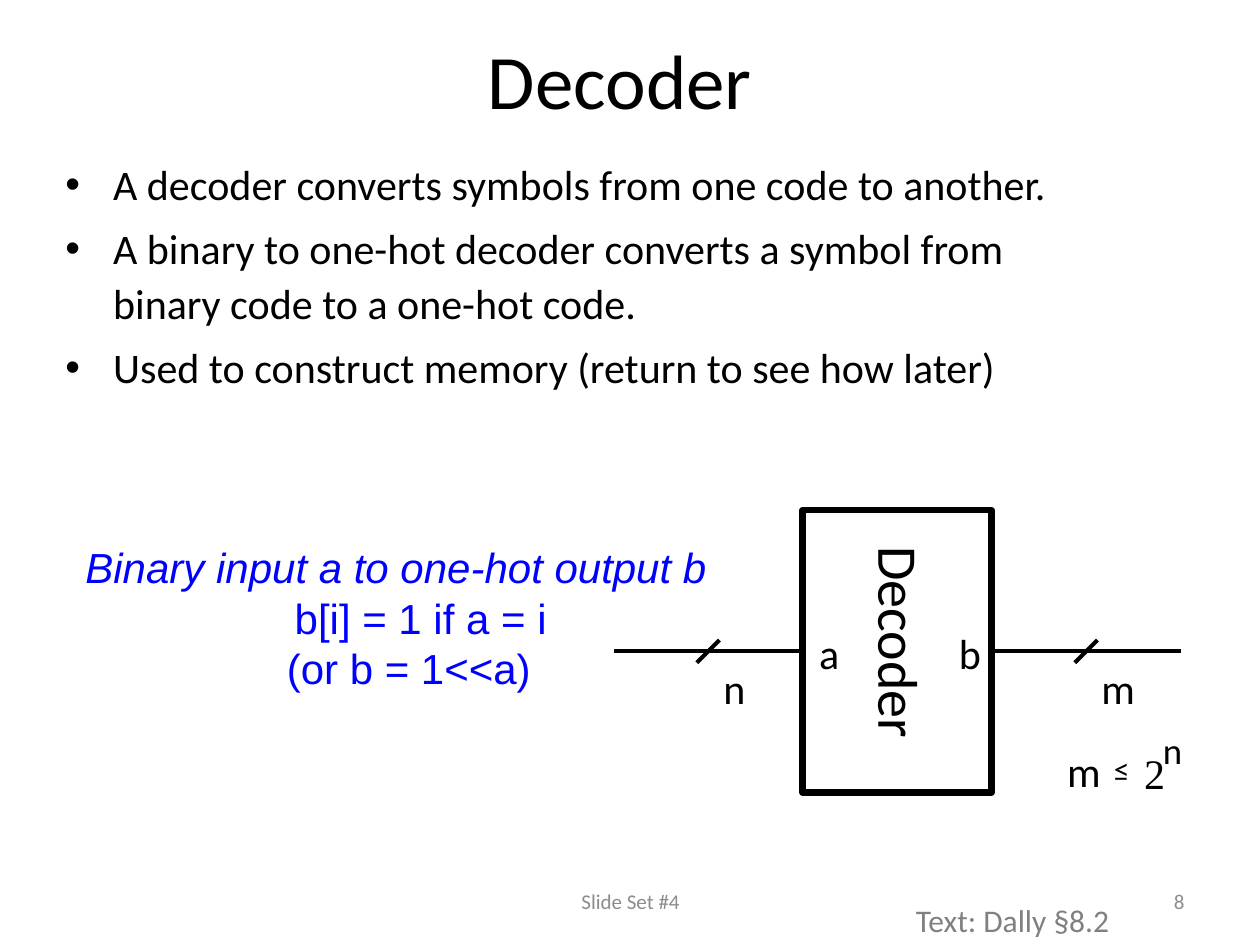
from dataclasses import dataclass

from lxml.etree import SubElement
from pptx import Presentation
from pptx.dml.color import RGBColor
from pptx.enum.shapes import MSO_CONNECTOR as Link, MSO_SHAPE as Preset
from pptx.enum.text import MSO_ANCHOR as Anchor, PP_ALIGN as Align
from pptx.oxml.ns import qn
from pptx.util import Inches, Pt


@dataclass(frozen=True)
class Theme:
    """Colours, fonts and type sizes of the slide."""
    ink: RGBColor = RGBColor(0, 0, 0)
    paper: RGBColor = RGBColor(255, 255, 255)
    accent: RGBColor = RGBColor(0, 0, 255)
    source: RGBColor = RGBColor(0x80, 0x80, 0x80)
    footer: RGBColor = RGBColor(0x8C, 0x8C, 0x8C)
    main: str = "Calibri"
    formula: str = "Arial"
    digit: str = "Times New Roman"
    title: int = 44
    block: int = 32
    body: int = 24
    exponent: int = 21
    small: int = 18
    tiny: int = 12


THEME = Theme()


def add_text(slide, box, lines, size=THEME.body, color=THEME.ink, font=THEME.main,
             align=Align.LEFT, anchor=Anchor.TOP, tight=False):
    """Place lines of text in a box and return its shape."""
    shape = slide.shapes.add_textbox(*map(Inches, box))
    frame = shape.text_frame
    frame.text = "\n".join(lines)
    frame.word_wrap = not tight
    frame.vertical_anchor = anchor
    if tight:
        for side in ("left", "top", "right", "bottom"):
            setattr(frame, f"margin_{side}", 0)
    for paragraph in frame.paragraphs:
        paragraph.alignment = align
        for run in paragraph.runs:
            run.font.color.rgb = color
            for key, value in {"size": Pt(size), "name": font}.items():
                setattr(run.font, key, value)
    return shape


def add_wire(slide, start, end):
    """Draw a straight black line between two points."""
    wire = slide.shapes.add_connector(Link.STRAIGHT, *map(Inches, start + end))
    wire.line.color.rgb = THEME.ink
    wire.line.width = Pt(2.25)
    SubElement(wire._element.spPr, qn("a:effectLst"))
    return wire


def add_bullets(slide, box, points):
    """Write the bulleted points with a hanging indent."""
    body = add_text(slide, box, points)
    for paragraph in body.text_frame.paragraphs:
        paragraph.line_spacing = 1.1
        paragraph.space_before = Pt(0.2 * THEME.body)
        props = paragraph._p.get_or_add_pPr()
        props.set("marL", str(Inches(0.38)))
        props.set("indent", str(Inches(-0.38)))
        SubElement(props, qn("a:buFont"), typeface="Arial")
        SubElement(props, qn("a:buChar"), char="•")


def add_definition(slide, box):
    """Write the blue definition of the one-hot output."""
    lines = ["Binary input a to one-hot output b", "b[i] = 1 if a = i", "(or b = 1<<a)"]
    definition = add_text(slide, box, lines, color=THEME.accent, font=THEME.formula,
                          align=Align.CENTER)
    heading, rule, _ = definition.text_frame.paragraphs
    heading.alignment = Align.LEFT
    heading.runs[0].font.italic = True
    rule._p.get_or_add_pPr().set("marL", str(Inches(0.19)))


def add_bus(slide, left, y, length, width_label):
    """Draw a bus with its slash and width label, and return its line."""
    bus = add_wire(slide, (left, y), (left + length, y))
    add_wire(slide, (left + 0.66, y + 0.09), (left + 0.84, y - 0.09))
    add_text(slide, (left + 0.87, y + 0.09, 0.28, 0.4), [width_label], tight=True)
    return bus


def add_decoder(slide, box):
    """Draw the decoder block with its ports and buses."""
    left, top, width, height = box
    middle = top + height / 2
    block = slide.shapes.add_shape(Preset.RECTANGLE, *map(Inches, box))
    block.shadow.inherit = False
    block.fill.background()
    block.line.color.rgb = THEME.ink
    block.line.width = Pt(3.63)
    add_bus(slide, left - width, middle, width, "n").end_connect(block, 1)
    add_bus(slide, left + width, middle, width, "m").begin_connect(block, 3)
    for port, offset in {"a": 0.13, "b": 1.24}.items():
        add_text(slide, (left + offset, middle - 0.19, 0.19, 0.4), [port], tight=True)
    name = add_text(slide, (left - 0.06, middle - 0.26, 1.68, 0.53), ["Decoder"],
                    THEME.block, tight=True)
    name.rotation = 90


def add_inequality(slide, box):
    """Write m ≤ 2 to the power n, one symbol at a time."""
    left, top, _, _ = box
    symbols = [
        ("m", 0, 0.14, 0.28, THEME.body, THEME.main),
        ("≤", 0.37, 0.17, 0.15, THEME.small, THEME.main),
        ("2", 0.61, 0.15, 0.17, THEME.body, THEME.digit),
        ("n", 0.76, 0, 0.16, THEME.exponent, THEME.main),
    ]
    for symbol, dx, dy, width, size, font in symbols:
        add_text(slide, (left + dx, top + dy, width, 0.4), [symbol], size, font=font,
                 tight=True)


def add_footer(slide, box):
    """Write the source, the slide set and the slide number."""
    left, top, width, height = box
    add_text(slide, (left + 3.75, top + 0.15, 1.75, height), ["Text: Dally §8.2"],
             THEME.small, THEME.source)
    add_text(slide, (left + width - 2.33, top, 2.33, height), ["8"], THEME.tiny,
             THEME.footer, align=Align.RIGHT, anchor=Anchor.MIDDLE)
    add_text(slide, (left, top, 3.17, height), ["Slide Set #4"], THEME.tiny,
             THEME.footer, align=Align.CENTER, anchor=Anchor.MIDDLE)


def main():
    """Build the decoder slide and save it."""
    deck = Presentation()
    deck.slide_width, deck.slide_height = Inches(10), Inches(7.5)
    slide = deck.slides.add_slide(deck.slide_layouts[6])
    slide.background.fill.solid()
    slide.background.fill.fore_color.rgb = THEME.paper
    add_text(slide, (0.42, 0, 9, 1.25), ["Decoder"], THEME.title,
             align=Align.CENTER, anchor=Anchor.MIDDLE)
    add_bullets(slide, (0.42, 1.17, 8.06, 5.25), [
        "A decoder converts symbols from one code to another.",
        "A binary to one-hot decoder converts a symbol from binary code to a one-hot code.",
        "Used to construct memory (return to see how later)",
    ])
    add_definition(slide, (0.58, 4.25, 5.33, 1.31))
    add_decoder(slide, (6.37, 4.05, 1.5, 2.24))
    add_inequality(slide, (8.47, 5.78, 0.92, 0.54))
    add_footer(slide, (3.42, 6.95, 6.08, 0.4))
    deck.save("out.pptx")


if __name__ == "__main__":
    main()
